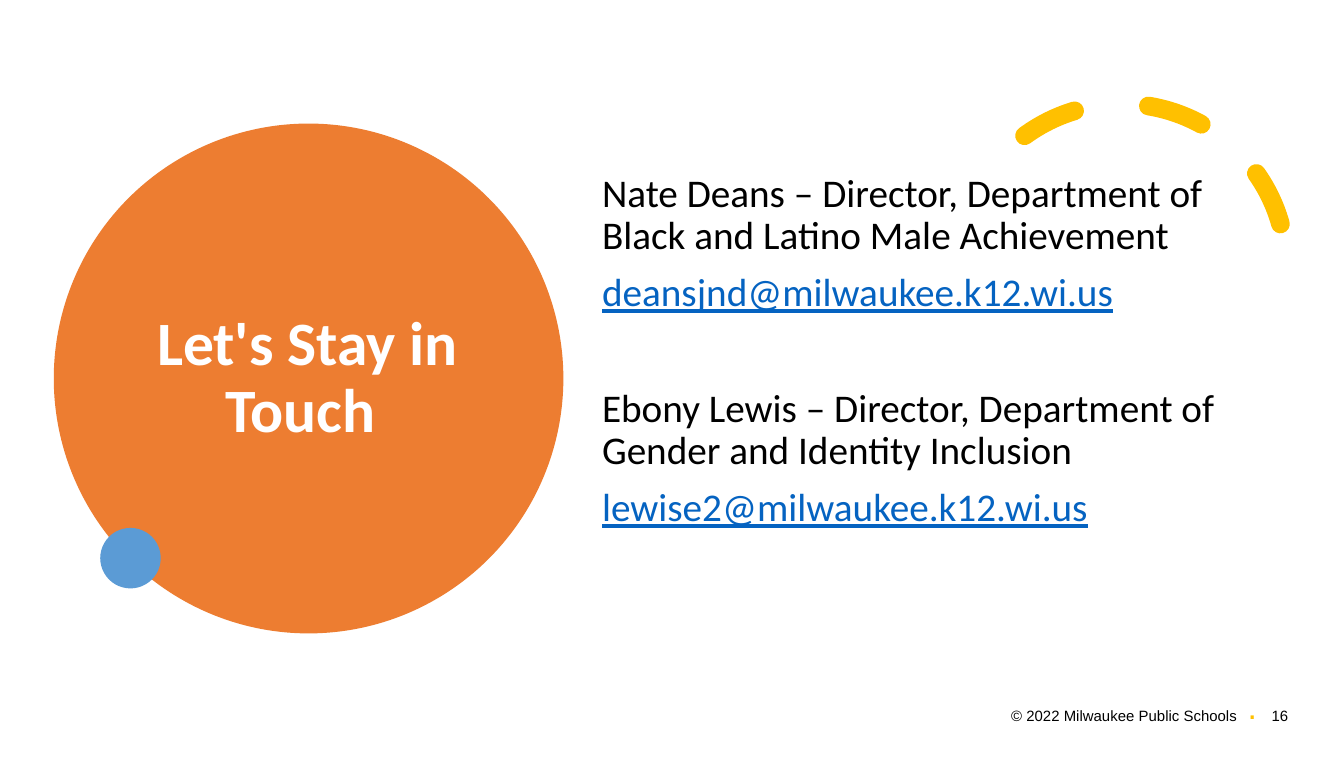
from dataclasses import dataclass
from typing import Optional

from lxml import etree
from pptx import Presentation
from pptx.dml.color import RGBColor
from pptx.enum import dml, shapes, text
from pptx.oxml import ns
from pptx.util import Pt

WHITE = RGBColor(0xFF, 0xFF, 0xFF)
BLACK = RGBColor(0x00, 0x00, 0x00)
ORANGE = RGBColor(0xED, 0x7D, 0x31)
BLUE = RGBColor(0x5B, 0x9B, 0xD5)
GOLD = RGBColor(0xFF, 0xC0, 0x00)
LINK = RGBColor(0x05, 0x63, 0xC1)

LEFT, CENTER, RIGHT = text.PP_ALIGN.LEFT, text.PP_ALIGN.CENTER, text.PP_ALIGN.RIGHT
TOP, MIDDLE = text.MSO_ANCHOR.TOP, text.MSO_ANCHOR.MIDDLE


@dataclass(frozen=True)
class Area:
    left: float
    top: float
    width: float
    height: float

    def lengths(self) -> tuple:
        return Pt(self.left), Pt(self.top), Pt(self.width), Pt(self.height)


@dataclass(frozen=True)
class Contact:
    role: str
    email: str
    space_before: float


CONTACTS = (
    Contact("Nate Deans – Director, Department of Black and Latino Male Achievement",
            "deansjnd@milwaukee.k12.wi.us", 0),
    Contact("Ebony Lewis – Director, Department of Gender and Identity Inclusion",
            "lewise2@milwaukee.k12.wi.us", 39),
)


def add_filled(page, kind, area: Area, color: RGBColor):
    shape = page.shapes.add_shape(kind, *area.lengths())
    shape.shadow.inherit = False
    shape.fill.solid()
    shape.fill.fore_color.rgb = color
    shape.line.fill.background()
    return shape


def add_dashed_arc(page, area: Area) -> None:
    arc = page.shapes.add_shape(shapes.MSO_SHAPE.ARC, *area.lengths())
    arc.shadow.inherit = False
    arc.rotation = 330.1
    arc.adjustments[0] = 158.174
    arc.adjustments[1] = 17.814
    arc.fill.background()
    arc.line.color.rgb = GOLD
    arc.line.width = Pt(10)
    arc.line.dash_style = dml.MSO_LINE.DASH
    outline = arc.line._get_or_add_ln()
    outline.set("cap", "rnd")
    dash = outline.find(ns.qn("a:prstDash"))
    dash.addnext(etree.Element(ns.qn("a:round")))


def add_text_box(page, area: Area, *, wrap: bool = True, anchor=TOP,
                 margins: tuple = (7.2, 3.6)):
    box = page.shapes.add_textbox(*area.lengths())
    set_frame(box, wrap=wrap, anchor=anchor, margins=margins)
    return box


def set_frame(box, *, wrap: bool, anchor, margins: tuple) -> None:
    frame = box.text_frame
    frame.word_wrap = wrap
    frame.vertical_anchor = anchor
    frame.margin_left = frame.margin_right = Pt(margins[0])
    frame.margin_top = frame.margin_bottom = Pt(margins[1])


def write(box, words: str, *, size: float, font: str = "Calibri",
          color: RGBColor = BLACK, bold: bool = False, underline: bool = False,
          align=LEFT, line_spacing: float = 1.0,
          space_before: Optional[float] = None) -> None:
    frame = box.text_frame
    para = frame.paragraphs[0] if not frame.text else frame.add_paragraph()
    para.alignment = align
    para.line_spacing = line_spacing
    if space_before:
        para.space_before = Pt(space_before)
    span = para.add_run()
    span.text = words
    span.font.name = font
    span.font.size = Pt(size)
    span.font.bold = bold
    span.font.underline = underline
    span.font.color.rgb = color


def add_contacts(page) -> None:
    box = add_text_box(page, Area(316.8, 90, 342.7, 232.6), margins=(5.76, 2.88))
    for contact in CONTACTS:
        write(box, contact.role, size=21, line_spacing=0.9,
              space_before=contact.space_before)
        write(box, contact.email, size=21, color=LINK, underline=True,
              line_spacing=0.9, space_before=8)


def add_footer(page) -> None:
    notice = add_filled(page, shapes.MSO_SHAPE.RECTANGLE,
                        Area(533.9, 375.1, 136.1, 17.3), WHITE)
    set_frame(notice, wrap=False, anchor=TOP, margins=(7.2, 3.6))
    write(notice, "© 2022 Milwaukee Public Schools", size=8, font="Arial", align=RIGHT)
    number = add_text_box(page, Area(674.2, 375.1, 26.6, 17.3), wrap=False)
    write(number, "16", size=8, font="Arial")
    dot = add_text_box(page, Area(664.6, 363.6, 10.8, 28.8), wrap=False)
    write(dot, ".", size=18, font="Arial", color=GOLD, align=CENTER)


def main() -> None:
    deck = Presentation()
    deck.slide_width, deck.slide_height = Pt(720), Pt(405.37)
    page = deck.slides.add_slide(deck.slide_layouts[6])
    add_filled(page, shapes.MSO_SHAPE.OVAL, Area(28.8, 66.2, 273, 273), ORANGE)
    title = add_text_box(page, Area(69.1, 82.8, 191.5, 240.5), anchor=MIDDLE,
                         margins=(5.76, 2.88))
    write(title, "Let's Stay in Touch ", size=33, color=WHITE, bold=True,
          align=CENTER, line_spacing=0.9)
    add_dashed_arc(page, Area(512.9, 55.6, 176.4, 176.4))
    add_filled(page, shapes.MSO_SHAPE.OVAL, Area(53.7, 282.7, 32.4, 32.4), BLUE)
    add_contacts(page)
    add_footer(page)
    deck.save("out.pptx")


if __name__ == "__main__":
    main()
